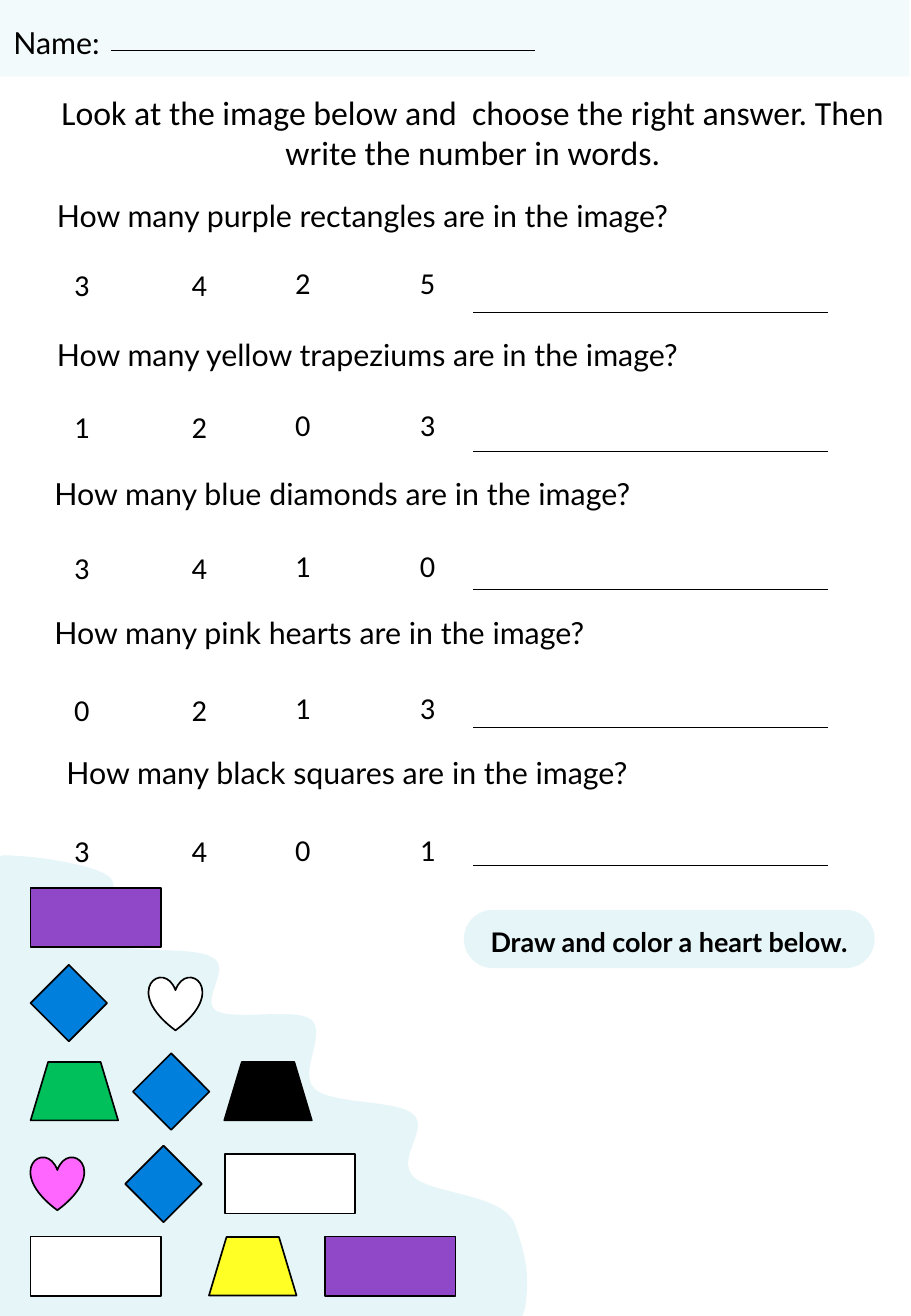
import pptx
import pptx.util
import pptx.dml.color
import pptx.enum.shapes
import pptx.enum.text
import pptx.oxml
import pptx.oxml.ns
from lxml import etree

Cm, Pt = pptx.util.Cm, pptx.util.Pt
RGBColor = pptx.dml.color.RGBColor
MSO_SHAPE = pptx.enum.shapes.MSO_SHAPE
PP_ALIGN = pptx.enum.text.PP_ALIGN
AUTO_SIZE = pptx.enum.text.MSO_AUTO_SIZE
ANCHOR = pptx.enum.text.MSO_ANCHOR
qn = pptx.oxml.ns.qn

# Content
INSTRUCTION = "Look at the image below and  choose the right answer. Then write the number in words."
NAME_LABEL = "Name:"
DRAWING_TASK = "Draw and color a heart below."
# Question, left edge in cm, answers to choose from
QUESTIONS = [
    ("How many purple rectangles are in the image?", 0.94, "3425"),
    ("How many yellow trapeziums are in the image?", 0.94, "1203"),
    ("How many blue diamonds are in the image?", 0.89, "3410"),
    ("How many pink hearts are in the image?", 0.89, "0213"),
    ("How many black squares are in the image?", 1.14, "3401"),
]

# Colours
BLACK = RGBColor(0x00, 0x00, 0x00)
WHITE = RGBColor(0xFF, 0xFF, 0xFF)
PALE_BLUE = RGBColor(0xE6, 0xF5, 0xF8)
PURPLE = RGBColor(0x91, 0x48, 0xC8)
BLUE = RGBColor(0x01, 0x7F, 0xDD)
PINK = RGBColor(0xFF, 0x66, 0xFF)
GREEN = RGBColor(0x00, 0xC0, 0x5B)
YELLOW = RGBColor(0xFF, 0xFF, 0x25)

# Layout in cm
WIDTH, HEIGHT = 19.05, 27.51
QUESTION_TOP, QUESTION_STEP = 3.99, 2.91
CHOICE_TOP, CHOICE_STEP = 5.44, 2.96
CHOICE_COLUMNS = [(1.30, 0), (3.76, 0), (5.92, -0.04), (8.53, -0.04)]  # left, vertical shift
ANSWER_TOP, ANSWER_STEP = 6.54, 2.89
ANSWER_LEFT, ANSWER_RIGHT = 9.90, 17.32

# Shapes to count: preset, width, height, rotation, then (left, top, colour)
COUNTED_SHAPES = [
    (MSO_SHAPE.RECTANGLE, 2.73, 1.24, 0,
     [(0.64, 18.56, PURPLE), (4.70, 24.13, WHITE), (0.64, 25.85, WHITE), (6.80, 25.85, PURPLE)]),
    (MSO_SHAPE.DIAMOND, 1.60, 1.60, 0,
     [(0.64, 20.17, BLUE), (2.62, 23.95, BLUE), (2.78, 22.02, BLUE)]),
    (MSO_SHAPE.HEART, 1.12, 1.12, 0, [(3.11, 20.42, WHITE), (0.64, 24.18, PINK)]),
    (MSO_SHAPE.FLOWCHART_MANUAL_OPERATION, 1.83, 1.22, 180,
     [(0.64, 22.20, GREEN), (4.37, 25.86, YELLOW), (4.69, 22.20, BLACK)]),
]

# Wavy corner: start point, then two control points and an end point per curve
WAVE_START = (0.05, 17.88)
WAVE_CURVES = [
    ((0.69, 17.88), (1.91, 18.06), (2.26, 18.31)),
    ((2.67, 18.59), (1.83, 19.41), (2.21, 19.69)),
    ((2.57, 19.96), (4.06, 19.76), (4.45, 20.02)),
    ((4.85, 20.24), (4.19, 20.90), (4.52, 21.13)),
    ((4.88, 21.34), (6.17, 21.06), (6.50, 21.31)),
    ((6.86, 21.59), (6.22, 22.43), (6.58, 22.76)),
    ((6.93, 23.09), (8.31, 22.99), (8.64, 23.29)),
    ((8.99, 23.60), (8.28, 24.21), (8.64, 24.59)),
    ((8.99, 24.97), (10.54, 24.94), (10.77, 25.60)),
    ((10.90, 26.01), (11.13, 26.54), (10.97, 27.38)),
]
WAVE_CORNERS = [(10.92, 27.53), (0, 27.53), (0, 17.91)]


def paint(shape, color, outlined=False):
    shape.shadow.inherit = False
    shape.fill.solid()
    shape.fill.fore_color.rgb = color
    if outlined:
        shape.line.color.rgb = BLACK
        shape.line.width = Pt(1)
    else:
        shape.line.fill.background()


def add_preset(slide, preset, left, top, width, height, color, outlined=False):
    shape = slide.shapes.add_shape(preset, Cm(left), Cm(top), Cm(width), Cm(height))
    paint(shape, color, outlined)
    return shape


def write(shape, text, size, font, bold=False, align=PP_ALIGN.LEFT):
    shape.text_frame.text = text
    shape.text_frame.word_wrap = True
    paragraph = shape.text_frame.paragraphs[0]
    paragraph.alignment = align
    run_font = paragraph.runs[0].font
    run_font.name, run_font.size, run_font.bold = font, Pt(size), bold
    run_font.color.rgb = BLACK


def add_label(slide, text, left, top, width, font):
    box = slide.shapes.add_textbox(Cm(left), Cm(top), Cm(width), Cm(1.02))
    write(box, text, 18, font)
    box.text_frame.auto_size = AUTO_SIZE.SHAPE_TO_FIT_TEXT


def add_writing_line(slide, left, right, top):
    line = slide.shapes.add_connector(
        pptx.enum.shapes.MSO_CONNECTOR.STRAIGHT, Cm(left), Cm(top), Cm(right), Cm(top))
    line.line.color.rgb = BLACK
    line.line.width = Pt(0.5)
    etree.SubElement(line._element.spPr, qn("a:effectLst"))


def add_wave(slide):
    points = [point for curve in WAVE_CURVES for point in curve] + WAVE_CORNERS
    builder = slide.shapes.build_freeform(Cm(WAVE_START[0]), Cm(WAVE_START[1]))
    builder.add_line_segments([(Cm(x), Cm(y)) for x, y in points], close=True)
    wave = builder.convert_to_shape()
    paint(wave, PALE_BLUE)
    # Join each three segments into one Bezier curve
    segments = list(wave._element.iter(qn("a:lnTo")))
    for index in range(0, 3 * len(WAVE_CURVES), 3):
        curve = etree.Element(qn("a:cubicBezTo"))
        segments[index].addprevious(curve)
        for segment in segments[index:index + 3]:
            curve.append(segment[0])
            segment.getparent().remove(segment)


def main():
    presentation = pptx.Presentation()
    presentation.slide_width, presentation.slide_height = Cm(WIDTH), Cm(HEIGHT)
    slide = presentation.slides.add_slide(presentation.slide_layouts[5])

    # Instruction
    title = slide.shapes.title
    title.left, title.top, title.width, title.height = Cm(1), Cm(1.79), Cm(17.78), Cm(1.96)
    write(title, INSTRUCTION, 20, "Calibri", align=PP_ALIGN.CENTER)
    title.text_frame.vertical_anchor = ANCHOR.TOP
    title.text_frame.auto_size = AUTO_SIZE.NONE

    # Name band, 46 % opaque
    band = add_preset(slide, MSO_SHAPE.RECTANGLE, 0, 0, 19.02, 1.60, PALE_BLUE)
    band_color = band._element.spPr.find(".//" + qn("a:srgbClr"))
    etree.SubElement(band_color, qn("a:alpha")).set("val", "46000")
    add_label(slide, NAME_LABEL, 0.03, 0.38, 2.72, "Lato")
    add_writing_line(slide, 2.32, 11.18, 1.05)

    # Corner with the shapes to count
    add_wave(slide)
    for preset, width, height, rotation, places in COUNTED_SHAPES:
        for left, top, color in places:
            shape = add_preset(slide, preset, left, top, width, height, color, outlined=True)
            shape.rotation = rotation

    # Questions, choices and writing lines
    for row, (question, left, choices) in enumerate(QUESTIONS):
        add_label(slide, question, left, QUESTION_TOP + row * QUESTION_STEP, 16.26, "Lato")
        for choice, (column, shift) in zip(choices, CHOICE_COLUMNS):
            add_label(slide, choice, column, CHOICE_TOP + row * CHOICE_STEP + shift, 1.52, "Calibri")
        add_writing_line(slide, ANSWER_LEFT, ANSWER_RIGHT, ANSWER_TOP + row * ANSWER_STEP)

    # Drawing task
    task = add_preset(slide, MSO_SHAPE.ROUNDED_RECTANGLE, 9.70, 19.02, 8.59, 1.22, PALE_BLUE)
    task.adjustments[0] = 0.5
    write(task, DRAWING_TASK, 16, "Lato", bold=True, align=PP_ALIGN.CENTER)
    task.text_frame.vertical_anchor = ANCHOR.MIDDLE
    task.text_frame.margin_left = task.text_frame.margin_right = 0
    task.text_frame.margin_top, task.text_frame.margin_bottom = Cm(0.13), 0

    presentation.save("out.pptx")


if __name__ == "__main__":
    main()
